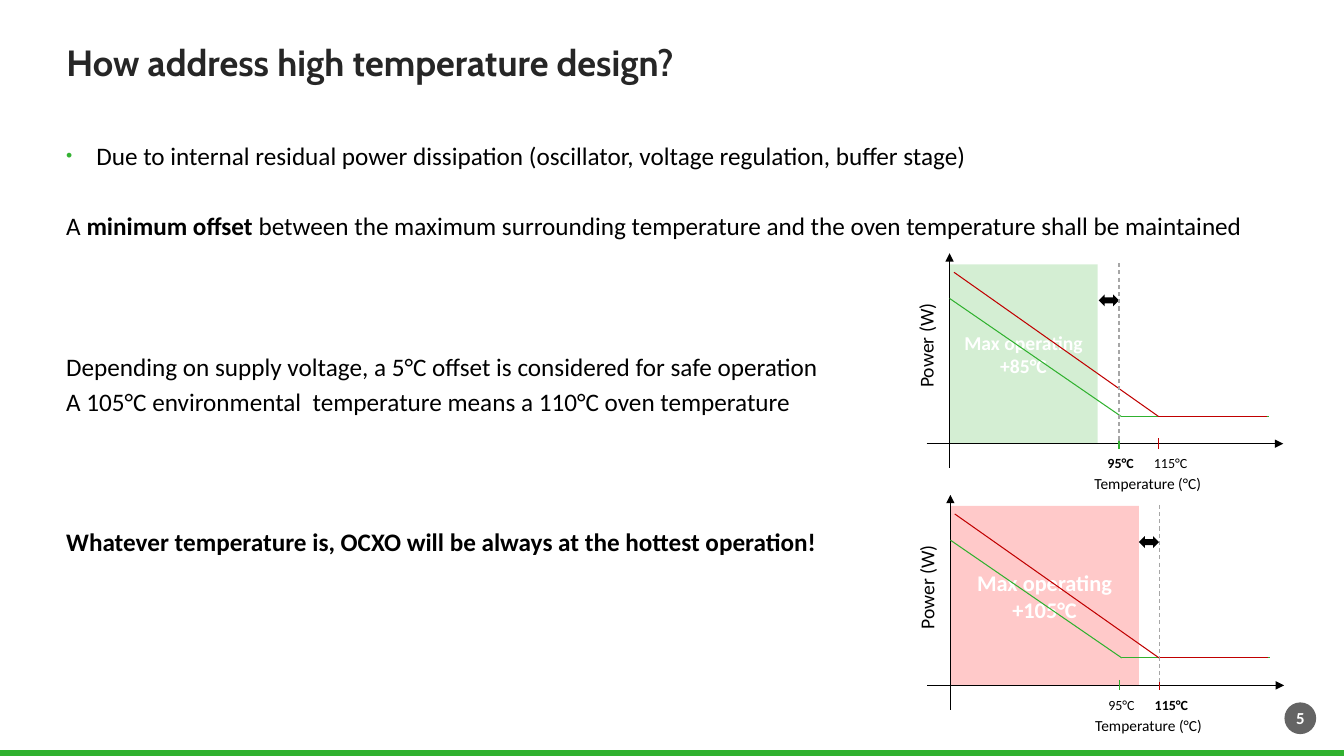
from lxml.etree import SubElement
from pptx import Presentation
from pptx.dml.color import RGBColor
from pptx.enum.dml import MSO_LINE
from pptx.enum.shapes import MSO_CONNECTOR, MSO_SHAPE
from pptx.enum.text import MSO_ANCHOR, PP_ALIGN
from pptx.oxml.ns import qn
from pptx.util import Cm, Pt

BLACK = RGBColor(0x00, 0x00, 0x00)
WHITE = RGBColor(0xFF, 0xFF, 0xFF)
INK = RGBColor(0x26, 0x26, 0x26)
GREEN = RGBColor(0x30, 0xB1, 0x2F)
ZONE_GREEN = RGBColor(0x34, 0xB2, 0x33)
ZONE_RED = RGBColor(0xFF, 0x00, 0x00)
DARK_RED = RGBColor(0xC0, 0x00, 0x00)
DASH_GREY = RGBColor(0xA6, 0xA6, 0xA6)
BADGE_GREY = RGBColor(0x64, 0x64, 0x64)

TURN_POINTS = {"95°C": (4.27, 3.73, 1.42, GREEN), "115°C": (5.26, 4.9, 1.7, DARK_RED)}
CURVES = [
    (GREEN, [(0, -3.66), (4.32, -0.69), (8.05, -0.69)]),
    (DARK_RED, [(0.11, -4.32), (5.26, -0.69), (8, -0.69)]),
]
STATEMENTS = [
    (0, [("Due to internal residual power dissipation (oscillator, voltage regulation, buffer stage)", False)]),
    (28.4, [
        ("A ", False),
        ("minimum offset ", True),
        ("between the maximum surrounding temperature and the oven temperature shall be maintained", False),
    ]),
    (78.8, [("Depending on supply voltage, a 5°C offset is considered for safe operation", False)]),
    (3.2, [("A 105°C environmental  temperature means a 110°C oven temperature", False)]),
    (78.8, [("Whatever temperature is, OCXO will be always at the hottest operation!", True)]),
]


def style(font, size, color=BLACK, bold=False, name="Calibri"):
    """Set the look of a font."""
    font.name, font.size, font.bold = name, Pt(size), bold
    font.color.rgb = color


def add_line(page, start, end, color, width=0.75, arrow=False, dashed=False):
    """Draw a straight line between two points in centimetres."""
    line = page.shapes.add_connector(MSO_CONNECTOR.STRAIGHT, *map(Cm, start + end))
    line.line.color.rgb = color
    line.line.width = Pt(width)
    if dashed:
        line.line.dash_style = MSO_LINE.DASH
    if arrow:
        SubElement(line.line._get_or_add_ln(), qn("a:tailEnd"), type="triangle")
    SubElement(line._element.spPr, qn("a:effectLst"))


def add_filled(page, kind, left, top, width, height, color):
    """Draw a filled shape without outline or shadow."""
    shape = page.shapes.add_shape(kind, Cm(left), Cm(top), Cm(width), Cm(height))
    shape.shadow.inherit = False
    shape.fill.solid()
    shape.fill.fore_color.rgb = color
    shape.line.fill.background()
    return shape


def write_centred(shape, text, size):
    """Write bold white text in the middle of a shape."""
    frame = shape.text_frame
    frame.text = text
    frame.word_wrap = True
    frame.vertical_anchor = MSO_ANCHOR.MIDDLE
    frame.paragraphs[0].alignment = PP_ALIGN.CENTER
    style(frame.paragraphs[0].runs[0].font, size, WHITE, True)


def add_label(page, text, left, top, width, height, size, bold=False, rotation=0):
    """Place one line of text on a graph."""
    box = page.shapes.add_textbox(Cm(left), Cm(top), Cm(width), Cm(height))
    box.rotation = rotation
    box.text_frame.word_wrap = True
    box.text_frame.text = text
    style(box.text_frame.paragraphs[0].runs[0].font, size, bold=bold)


def add_title(page, left, top, width, height):
    """Place and format the slide title."""
    title = page.shapes.title
    title.left, title.top, title.width, title.height = map(Cm, (left, top, width, height))
    title.text_frame.text = "How address high temperature design?"
    title.text_frame.vertical_anchor = MSO_ANCHOR.MIDDLE
    para = title.text_frame.paragraphs[0]
    para.alignment = PP_ALIGN.LEFT
    style(para.runs[0].font, 26, INK, True, "Cabin")


def add_bullet(para):
    """Give a paragraph a small green bullet and a hanging indent."""
    props = para._p.get_or_add_pPr()
    props.set("marL", str(Cm(0.76)))
    props.set("indent", str(-Cm(0.76)))
    SubElement(SubElement(props, qn("a:buClr")), qn("a:srgbClr"), val=str(ZONE_GREEN))
    SubElement(props, qn("a:buSzPct"), val="70000")
    SubElement(props, qn("a:buFont"), typeface="Arial")
    SubElement(props, qn("a:buChar"), char="•")


def add_statements(page, left, top, width, height):
    """Write the statements, spaced apart by paragraph spacing."""
    box = page.shapes.add_textbox(Cm(left), Cm(top), Cm(width), Cm(height))
    frame = box.text_frame
    frame.word_wrap = True
    for index, (gap, pieces) in enumerate(STATEMENTS):
        para = frame.add_paragraph() if index else frame.paragraphs[0]
        if index:
            para.space_before = Pt(gap)
        else:
            add_bullet(para)
        for text, bold in pieces:
            span = para.add_run()
            span.text = text
            style(span.font, 18, bold=bold)


def add_zone(page, left, base, limit, width, color, size):
    """Shade the operating range of a graph whose origin is at left, base."""
    zone = add_filled(page, MSO_SHAPE.RECTANGLE, left, base - 4.52, width, 4.52, color)
    SubElement(zone._element.spPr.find(".//" + qn("a:srgbClr")), qn("a:alpha"), val="21000")
    write_centred(zone, f"Max operating {limit}", size)


def add_graph(page, left, base, oven):
    """Draw the power graph with its origin at left, base."""
    def at(x, y):
        return left + x, base + y

    add_line(page, at(-0.58, 0), at(8.41, 0), BLACK, arrow=True)
    add_line(page, at(0, 0.61), at(0, -4.8), BLACK, arrow=True)
    for color, points in CURVES:
        for start, end in zip(points, points[1:]):
            add_line(page, at(*start), at(*end), color)
    for name, (x, label_x, label_width, color) in TURN_POINTS.items():
        add_line(page, at(x, -0.14), at(x, 0.13), color)
        add_label(page, name, *at(label_x, 0.15), label_width, 0.69, 10, name == oven)
    add_label(page, "Power (W)", *at(-2.18, -3.18), 3.18, 0.86, 14, rotation=270)
    add_label(page, "Temperature (°C)", *at(3.4, 0.64), 4.65, 0.74, 11)
    oven_x = TURN_POINTS[oven][0]
    add_filled(page, MSO_SHAPE.LEFT_RIGHT_ARROW, *at(oven_x - 0.51, -3.76), 0.51, 0.3, BLACK)
    add_line(page, at(oven_x, -4.55), at(oven_x, 0), DASH_GREY, dashed=True)


def add_footer(page, width, base):
    """Draw the green rule and the page number badge."""
    add_line(page, (0, base), (width, base), GREEN, 4)
    badge = add_filled(page, MSO_SHAPE.OVAL, width - 1.5, base - 1.27, 0.8, 0.8, BADGE_GREY)
    frame = badge.text_frame
    frame.margin_left = frame.margin_right = frame.margin_top = frame.margin_bottom = 0
    write_centred(badge, "5", 12)


def main():
    """Build the slide and save it."""
    deck = Presentation()
    deck.slide_width, deck.slide_height = Cm(33.87), Cm(19.05)
    page = deck.slides.add_slide(deck.slide_layouts[5])
    add_footer(page, 33.87, 18.97)
    add_statements(page, 1.42, 3.42, 30.91, 11.5)
    add_title(page, 1.42, 0.61, 23.01, 1.9)
    add_zone(page, 23.93, 11.18, "+85°C", 3.73, ZONE_GREEN, 14)
    add_zone(page, 23.95, 17.27, "+105°C", 4.75, ZONE_RED, 16)
    add_graph(page, 23.93, 11.18, "95°C")
    add_graph(page, 23.95, 17.27, "115°C")
    deck.save("out.pptx")


if __name__ == "__main__":
    main()
